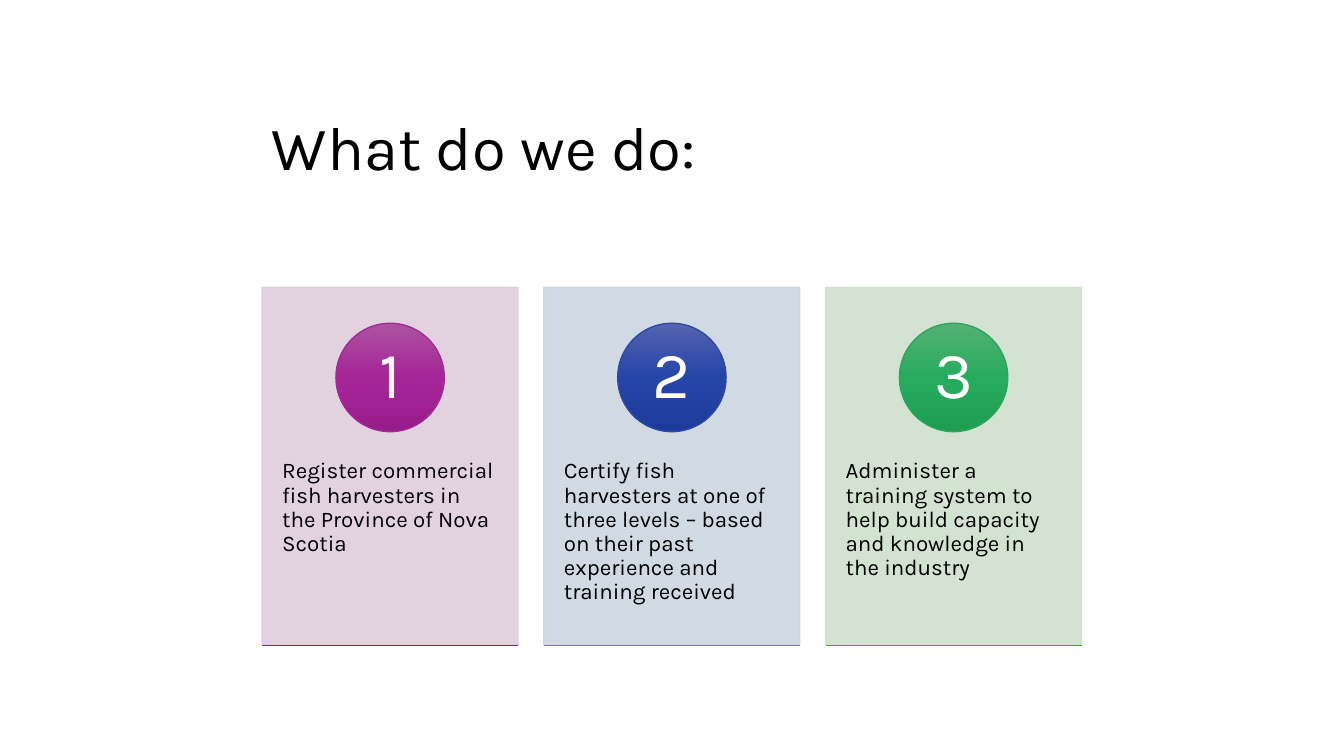
import copy

import pptx
import pptx.dml.color
import pptx.enum.shapes
import pptx.enum.text
import pptx.oxml.ns
import pptx.util

Pt = pptx.util.Pt
Shape = pptx.enum.shapes.MSO_SHAPE
Align = pptx.enum.text.PP_ALIGN
Anchor = pptx.enum.text.MSO_ANCHOR
qn = pptx.oxml.ns.qn

COLORS = {"text": "000000", "digit": "FFFFFF"}

# card fill, circle gradient, circle outline, base line, caption
CARDS = [
    ("DFCDDC", ("AC53A0", "A62598", "991C8B"), "A02B93", "5F2CA1",
     "Register commercial fish harvesters in the Province of Nova Scotia"),
    ("CDD6E0", ("5363AF", "2645A9", "1D3B9B"), "2C49A3", "2D9AA4",
     "Certify fish harvesters at one of three levels – based on their past "
     "experience and training received"),
    ("D0E1CD", ("54B173", "27AC5E", "1E9E52"), "2DA65F", "4EA72E",
     "Administer a training system to help build capacity and knowledge in the industry"),
]
LEFT, TOP, WIDTH, HEIGHT = 187.2, 205.2, 182.9, 255.6
STEP = 201.25
CIRCLE = 77.4


def rgb(color):
    return pptx.dml.color.RGBColor.from_string(color)


class Painter:
    def __init__(self, page, font="Karla"):
        self.page = page
        self.font = font

    def set_text(self, shape, text, size, color, align=Align.LEFT,
                 anchor=Anchor.TOP, insets=(7.2, 3.6)):
        frame = shape.text_frame
        frame.word_wrap = True
        frame.vertical_anchor = anchor
        frame.margin_left = frame.margin_right = Pt(insets[0])
        frame.margin_top = frame.margin_bottom = Pt(insets[1])
        para = frame.paragraphs[0]
        para.text = text
        para.alignment = align
        para.line_spacing = 0.9
        para.font.name = self.font
        para.font.size = Pt(size)
        para.font.color.rgb = rgb(color)

    def text(self, left, top, width, height, text, size, **layout):
        box = self.page.shapes.add_textbox(Pt(left), Pt(top), Pt(width), Pt(height))
        self.set_text(box, text, size, COLORS["text"], **layout)

    def shape(self, kind, left, top, width, height, outline):
        shape = self.page.shapes.add_shape(kind, Pt(left), Pt(top), Pt(width), Pt(height))
        shape.shadow.inherit = False
        shape.line.color.rgb = rgb(outline)
        shape.line.width = Pt(1)
        return shape

    def panel(self, left, top, width, height, color):
        """Draw a rectangle whose fill and outline are 90 % opaque."""
        panel = self.shape(Shape.RECTANGLE, left, top, width, height, color)
        panel.fill.solid()
        panel.fill.fore_color.rgb = rgb(color)
        for tint in panel._element.spPr.findall(".//" + qn("a:srgbClr")):
            tint.append(tint.makeelement(qn("a:alpha"), {"val": "90000"}))

    def badge(self, left, top, size, digit, shades, outline):
        """Draw a circle with a three-stop vertical gradient and a number."""
        badge = self.shape(Shape.OVAL, left, top, size, size, outline)
        badge.fill.gradient()
        badge.fill.gradient_angle = 270
        stops = badge._element.spPr.find(".//" + qn("a:gsLst"))
        stops.append(copy.deepcopy(stops[-1]))
        for stop, position, shade in zip(badge.fill.gradient_stops, (0, 0.5, 1), shades):
            stop.position = position
            stop.color.rgb = rgb(shade)
        self.set_text(badge, digit, 47, COLORS["digit"], Align.CENTER,
                      Anchor.MIDDLE, (5.8, 0.7))

    def rule(self, left, top, width, color):
        rule = self.page.shapes.add_connector(
            pptx.enum.shapes.MSO_CONNECTOR.STRAIGHT,
            Pt(left), Pt(top), Pt(left + width), Pt(top))
        rule.line.color.rgb = rgb(color)
        rule.line.width = Pt(1)
        properties = rule._element.spPr
        properties.append(properties.makeelement(qn("a:effectLst"), {}))


def main():
    deck = pptx.Presentation()
    deck.slide_width, deck.slide_height = Pt(960), Pt(540)
    painter = Painter(deck.slides.add_slide(deck.slide_layouts[6]))

    painter.text(LEFT, 49, 584.6, 116.6, "What do we do:", 44, anchor=Anchor.MIDDLE)
    for index, (fill, shades, outline, base, caption) in enumerate(CARDS):
        left = LEFT + index * STEP
        painter.panel(left, TOP, WIDTH, HEIGHT, fill)
        painter.text(left, 302.4, WIDTH, 153.4, caption, 16, insets=(14.4, 25.9))
        painter.badge(left + (WIDTH - CIRCLE) / 2, 230.9, CIRCLE,
                      str(index + 1), shades, outline)
        painter.rule(left, TOP + HEIGHT + 0.4, WIDTH, base)

    deck.save("out.pptx")


if __name__ == "__main__":
    main()
